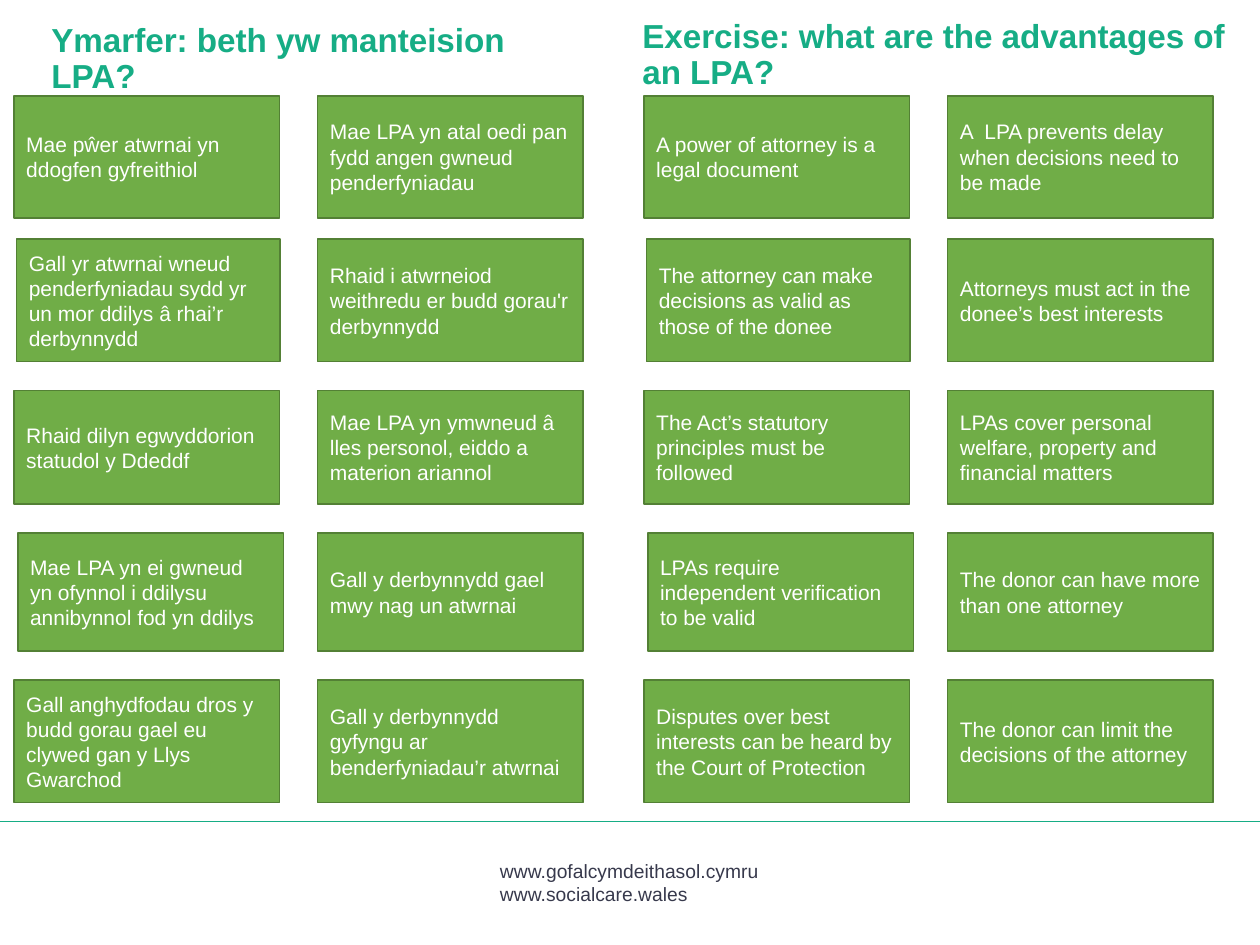
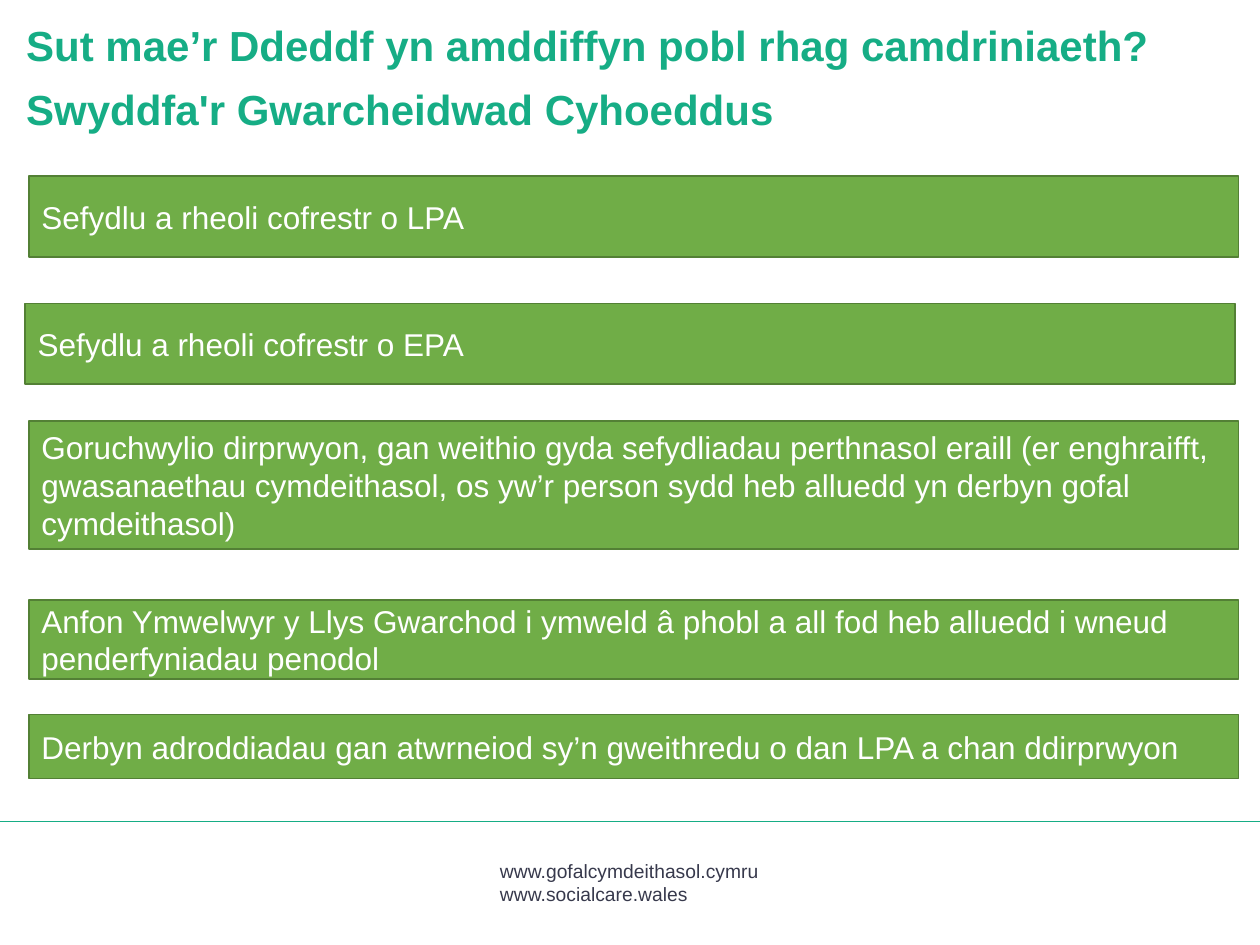
from pptx import Presentation
from pptx.dml.color import RGBColor
from pptx.enum.shapes import MSO_CONNECTOR, MSO_SHAPE
from pptx.enum.text import MSO_ANCHOR, PP_ALIGN
from pptx.oxml.ns import qn
from pptx.util import Inches, Pt
from lxml import etree

RECT = MSO_SHAPE.RECTANGLE
LINE = MSO_CONNECTOR.STRAIGHT
LEFT = PP_ALIGN.LEFT
TOP, MID = MSO_ANCHOR.TOP, MSO_ANCHOR.MIDDLE

# Shared look
TEAL, GREEN, EDGE = "16AD85", "70AD47", "538035"
WHITE, INK = "FFFFFF", "37394C"
FONT = "Arial"

# Card grid: top, height, left and width of the left card
ROWS = [
    (0.76, 0.97, 0.11, 2.11),
    (1.9, 0.97, 0.13, 2.09),
    (3.1, 0.9, 0.11, 2.11),
    (4.23, 0.94, 0.14, 2.11),
    (5.4, 0.97, 0.11, 2.11),
]
RIGHT, WIDE = 2.52, 2.11
HALF = 5

# Left and right card of each row
WELSH = [
    ("Mae pŵer atwrnai yn ddogfen gyfreithiol",
     "Mae LPA yn atal oedi pan fydd angen gwneud penderfyniadau"),
    ("Gall yr atwrnai wneud penderfyniadau sydd yr un mor ddilys â rhai’r derbynnydd",
     "Rhaid i atwrneiod weithredu er budd gorau'r derbynnydd"),
    ("Rhaid dilyn egwyddorion statudol y Ddeddf",
     "Mae LPA yn ymwneud â lles personol, eiddo a materion ariannol"),
    ("Mae LPA yn ei gwneud yn ofynnol i ddilysu annibynnol fod yn ddilys",
     "Gall y derbynnydd gael mwy nag un atwrnai"),
    ("Gall anghydfodau dros y budd gorau gael eu clywed gan y Llys Gwarchod",
     "Gall y derbynnydd gyfyngu ar benderfyniadau’r atwrnai"),
]
ENGLISH = [
    ("A power of attorney is a legal document",
     "A  LPA prevents delay when decisions need to be made"),
    ("The attorney can make decisions as valid as those of the donee",
     "Attorneys must act in the donee’s best interests"),
    ("The Act’s statutory principles must be followed",
     "LPAs cover personal welfare, property and financial matters"),
    ("LPAs require independent verification to be valid",
     "The donor can have more than one attorney"),
    ("Disputes over best interests can be heard by the Court of Protection",
     "The donor can limit the decisions of the attorney"),
]

# Duties of the guardian's office: left, top, height, text
DUTIES = [
    (0.23, 1.4, 0.64, "Sefydlu a rheoli cofrestr o LPA"),
    (0.2, 2.41, 0.64, "Sefydlu a rheoli cofrestr o EPA"),
    (0.23, 3.34, 1.02,
     "Goruchwylio dirprwyon, gan weithio gyda sefydliadau perthnasol eraill "
     "(er enghraifft, gwasanaethau cymdeithasol, os yw’r person sydd heb "
     "alluedd yn derbyn gofal cymdeithasol)"),
    (0.23, 4.76, 0.63,
     "Anfon Ymwelwyr y Llys Gwarchod i ymweld â phobl a all fod heb alluedd "
     "i wneud penderfyniadau penodol"),
    (0.23, 5.67, 0.51,
     "Derbyn adroddiadau gan atwrneiod sy’n gweithredu o dan LPA a chan "
     "ddirprwyon"),
]


def tint(code):
    return RGBColor.from_string(code)


def write(shape, lines, size, color, bold=False, anchor=TOP, space=1.0):
    frame = shape.text_frame
    frame.word_wrap = True
    frame.vertical_anchor = anchor
    for i, line in enumerate(lines):
        para = frame.paragraphs[0] if i == 0 else frame.add_paragraph()
        para.alignment = LEFT
        para.line_spacing = space
        run = para.add_run()
        run.text = line
        look = {"name": FONT, "size": Pt(size), "bold": bold}
        for key, value in look.items():
            setattr(run.font, key, value)
        run.font.color.rgb = tint(color)


def label(slide, box, lines, size, color, **style):
    shape = slide.shapes.add_textbox(*map(Inches, box))
    write(shape, lines, size, color, **style)


def title(slide, box, text, size, **style):
    label(slide, box, [text], size, TEAL, bold=True, **style)


def card(slide, box, text, size):
    shape = slide.shapes.add_shape(RECT, *map(Inches, box))
    shape.shadow.inherit = False
    shape.fill.solid()
    shape.fill.fore_color.rgb = tint(GREEN)
    shape.line.color.rgb = tint(EDGE)
    shape.line.width = Pt(1)
    write(shape, [text], size, WHITE, anchor=MID)


def footer(slide):
    label(slide, (3.87, 6.77, 2.26, 0.46),
          ["www.gofalcymdeithasol.cymru", "www.socialcare.wales"], 11, INK)
    rule = slide.shapes.add_connector(
        LINE, Inches(0), Inches(6.52), Inches(10), Inches(6.52))
    rule.line.color.rgb = tint(TEAL)
    rule.line.width = Pt(1)
    etree.SubElement(rule._element.spPr, qn("a:effectLst"))


def page(deck):
    slide = deck.slides.add_slide(deck.slide_layouts[6])
    footer(slide)
    return slide


def grid(slide, shift, pairs):
    for (top, high, left, wide), (first, second) in zip(ROWS, pairs):
        card(slide, (left + shift, top, wide, high), first, 12)
        card(slide, (RIGHT + shift, top, WIDE, high), second, 12)


def main():
    deck = Presentation()
    deck.slide_width, deck.slide_height = Inches(10), Inches(7.5)

    # Exercise in both languages
    slide = page(deck)
    title(slide, (0.31, 0.14, 3.87, 0.36),
          "Ymarfer: beth yw manteision LPA?", 19, space=0.9)
    title(slide, (5, 0.11, 5, 0.37),
          "Exercise: what are the advantages of an LPA?", 19, space=0.9)
    grid(slide, 0, WELSH)
    grid(slide, HALF, ENGLISH)

    # Protection from abuse
    slide = page(deck)
    title(slide, (0.11, 0.15, 9.2, 0.55),
          "Sut mae’r Ddeddf yn amddiffyn pobl rhag camdriniaeth?", 24, space=0.9)
    title(slide, (0.11, 0.47, 6.19, 0.79),
          "Swyddfa'r Gwarcheidwad Cyhoeddus", 24, anchor=MID)
    for left, top, high, text in DUTIES:
        card(slide, (left, top, 9.6, high), text, 18)

    deck.save("out.pptx")


if __name__ == "__main__":
    main()
